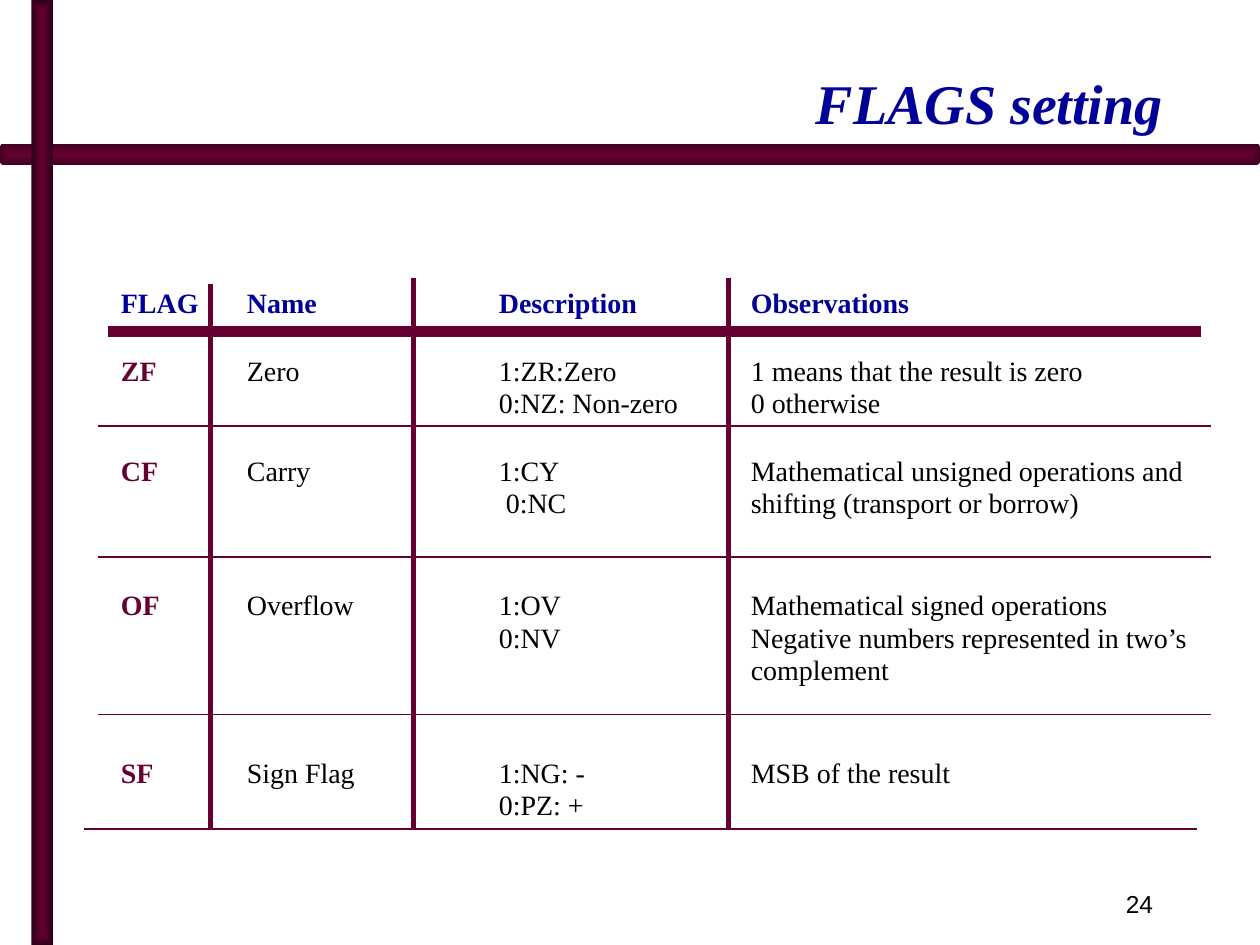
import dataclasses
import itertools
import typing

import lxml.etree
import pptx
import pptx.dml.color
import pptx.enum.shapes
import pptx.enum.text
import pptx.oxml.ns
import pptx.util

Inches = pptx.util.Inches
Pt = pptx.util.Pt
Align = pptx.enum.text.PP_ALIGN
Anchor = pptx.enum.text.MSO_ANCHOR
Preset = pptx.enum.shapes.MSO_SHAPE
qn = pptx.oxml.ns.qn

COLORS = {
    "maroon": "660033",
    "horizontal_edge": "410020",
    "vertical_edge": "2F0018",
    "navy": "000099",
    "black": "000000",
}
SERIF = "Times New Roman"
COLUMN_EDGES = [0.86, 1.86, 3.86, 5.86, 9.74]
ROW_EDGES = [2.21, 2.63, 3.38, 4.42, 5.67, 6.58]


@dataclasses.dataclass
class Bar:
    preset: Preset
    box: tuple[float, float, float, float]
    edge: str


@dataclasses.dataclass
class Rule:
    start: tuple[float, float]
    end: tuple[float, float]
    weight: float


@dataclasses.dataclass
class FlagRow:
    top_margin: float
    cells: list[str]


BARS = [
    Bar(Preset.ROUNDED_RECTANGLE, (0, 1.14, 10, 0.17), "horizontal_edge"),
    Bar(Preset.RECTANGLE, (0.25, 0, 0.17, 7.5), "vertical_edge"),
]
RULES = [
    Rule((0.86, 2.63), (9.53, 2.63), 6),
    *[Rule((0.78, y), (9.61, y), 1) for y in ROW_EDGES[2:5]],
    Rule((0.67, 6.58), (9.5, 6.58), 1),
    *[Rule((x, top), (x, 6.58), 3) for x, top in [(5.78, 2.21), (3.28, 2.21), (1.67, 2.25)]],
]
ROWS = [
    FlagRow(0.07, ["FLAG", "Name", "Description", "Observations"]),
    FlagRow(0.19, ["ZF", "Zero", "1:ZR:Zero\n0:NZ: Non-zero",
                   "1 means that the result is zero\n0 otherwise"]),
    FlagRow(0.23, ["CF", "Carry", "1:CY\n 0:NC",
                   "Mathematical unsigned operations and\nshifting (transport or borrow)"]),
    FlagRow(0.26, ["OF", "Overflow", "1:OV\n0:NV",
                   "Mathematical signed operations\n"
                   "Negative numbers represented in two’s\ncomplement"]),
    FlagRow(0.34, ["SF", "Sign Flag", "1:NG: -\n0:PZ: +", "MSB of the result"]),
]


def rgb(name: str) -> pptx.dml.color.RGBColor:
    """Return the named colour."""
    return pptx.dml.color.RGBColor.from_string(COLORS[name])


def write(frame: typing.Any, text: str, color: str, align: Align, spacing: float,
          font_format: dict[str, typing.Any]) -> None:
    """Fill a text frame and format every paragraph."""
    frame.text = text
    for paragraph in frame.paragraphs:
        paragraph.alignment = align
        paragraph.line_spacing = spacing
        for run in paragraph.runs:
            run.font.color.rgb = rgb(color)
            for attribute, value in font_format.items():
                setattr(run.font, attribute, value)


def add_label(slide: typing.Any, box: tuple[float, float, float, float], text: str,
              color: str, anchor: Anchor, font_format: dict[str, typing.Any]) -> None:
    """Add a right-aligned text box."""
    frame = slide.shapes.add_textbox(*map(Inches, box)).text_frame
    frame.word_wrap = True
    frame.vertical_anchor = anchor
    write(frame, text, color, Align.RIGHT, 1.0, font_format)


def add_bar(slide: typing.Any, bar: Bar) -> None:
    """Add a bar shaded from its centre to its edges."""
    shape = slide.shapes.add_shape(bar.preset, *map(Inches, bar.box))
    shape.shadow.inherit = False
    shape.line.fill.background()
    shape.fill.gradient()
    for stop, color in zip(shape.fill.gradient_stops, ["maroon", bar.edge]):
        stop.color.rgb = rgb(color)
    gradient = shape.element.spPr.find(qn("a:gradFill"))
    gradient.remove(gradient.find(qn("a:lin")))
    shading = lxml.etree.SubElement(gradient, qn("a:path"), {"path": "shape"})
    sides = dict.fromkeys("ltrb", "50000")
    lxml.etree.SubElement(shading, qn("a:fillToRect"), sides)


def add_rule(slide: typing.Any, rule: Rule) -> None:
    """Add a straight maroon rule."""
    connector = slide.shapes.add_connector(
        pptx.enum.shapes.MSO_CONNECTOR.STRAIGHT, *map(Inches, rule.start + rule.end))
    connector.line.color.rgb = rgb("maroon")
    connector.line.width = Pt(rule.weight)
    lxml.etree.SubElement(connector.element.spPr, qn("a:effectLst"))


def add_flag_table(slide: typing.Any) -> None:
    """Add the table of flags."""
    left, top = COLUMN_EDGES[0], ROW_EDGES[0]
    size = COLUMN_EDGES[-1] - left, ROW_EDGES[-1] - top
    table = slide.shapes.add_table(
        len(ROWS), len(COLUMN_EDGES) - 1, *map(Inches, (left, top, *size))).table
    table.first_row = table.horz_banding = False
    for column, (start, end) in zip(table.columns, itertools.pairwise(COLUMN_EDGES)):
        column.width = Inches(end - start)
    for row, (start, end) in zip(table.rows, itertools.pairwise(ROW_EDGES)):
        row.height = Inches(end - start)
    for row_index, flag_row in enumerate(ROWS):
        for column_index, text in enumerate(flag_row.cells):
            cell = table.cell(row_index, column_index)
            cell.fill.background()
            cell_format = {
                "margin_left": Inches(0.1),
                "margin_right": 0,
                "margin_top": Inches(flag_row.top_margin),
                "margin_bottom": 0,
                "vertical_anchor": Anchor.TOP,
            }
            for attribute, value in cell_format.items():
                setattr(cell, attribute, value)
            is_header, is_flag = row_index == 0, column_index == 0
            color = "navy" if is_header else "maroon" if is_flag else "black"
            write(cell.text_frame, text, color, Align.LEFT, 1.04,
                  {"name": SERIF, "size": Pt(16), "bold": is_header or is_flag})


def main() -> None:
    """Build and save the slide."""
    presentation = pptx.Presentation()
    presentation.slide_width = Inches(10)
    presentation.slide_height = Inches(7.5)
    slide = presentation.slides.add_slide(presentation.slide_layouts[6])
    for bar in BARS:
        add_bar(slide, bar)
    add_label(slide, (7.17, 6.92, 2.08, 0.5), "24", "black", Anchor.MIDDLE,
              {"name": "Arial", "size": Pt(14)})
    add_label(slide, (0.83, 0.17, 8.5, 0.96), "FLAGS setting", "navy", Anchor.BOTTOM,
              {"name": SERIF, "size": Pt(32), "bold": True, "italic": True})
    add_flag_table(slide)
    for rule in RULES:
        add_rule(slide, rule)
    presentation.save("out.pptx")


if __name__ == "__main__":
    main()
